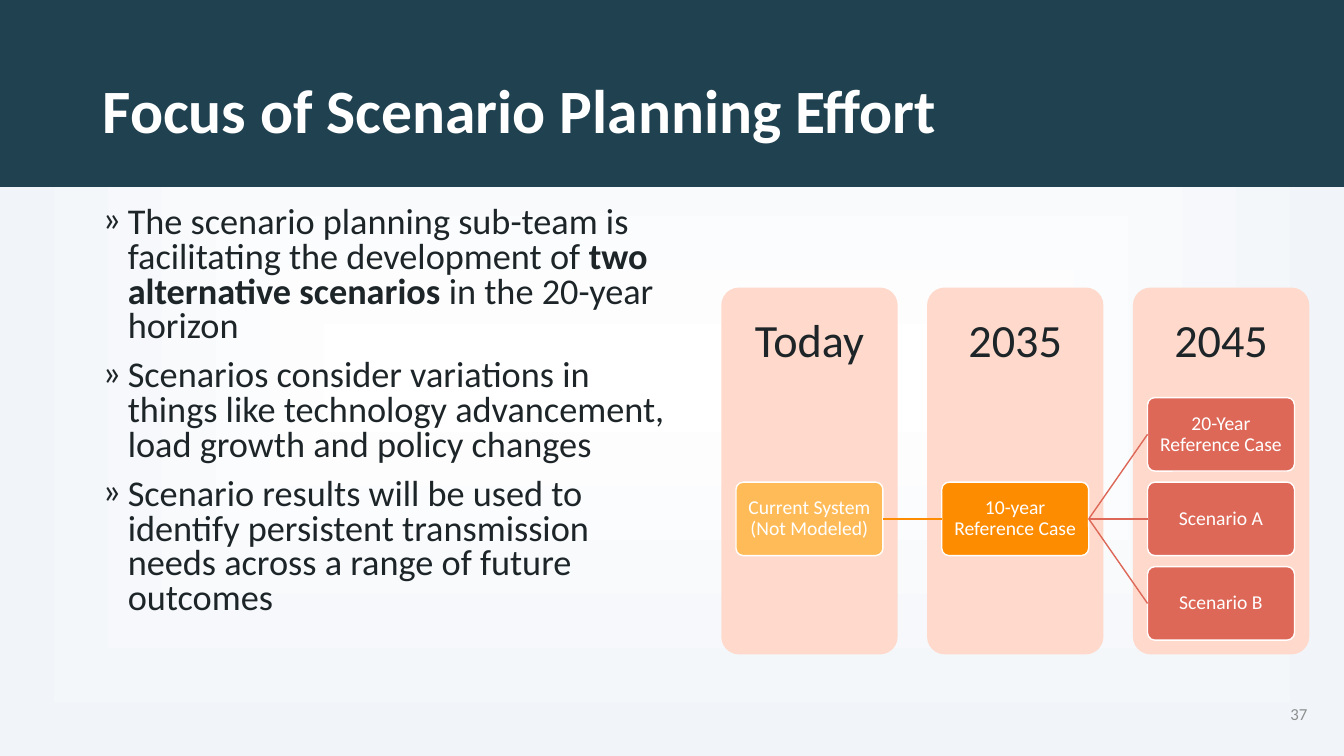
from lxml import etree
from pptx import Presentation
from pptx.dml.color import RGBColor
from pptx.enum.shapes import MSO_CONNECTOR, MSO_SHAPE
from pptx.enum.text import MSO_ANCHOR, PP_ALIGN
from pptx.oxml.ns import qn
from pptx.util import Pt

RECT, ROUND = MSO_SHAPE.RECTANGLE, MSO_SHAPE.ROUNDED_RECTANGLE
STRAIGHT = MSO_CONNECTOR.STRAIGHT
TOP, MIDDLE = MSO_ANCHOR.TOP, MSO_ANCHOR.MIDDLE
LEFT, CENTER, RIGHT = PP_ALIGN.LEFT, PP_ALIGN.CENTER, PP_ALIGN.RIGHT

C = {"white": "FFFFFF", "mist": "F1F5F9", "navy": "204150", "ink": "1D2528",
     "gray": "8D8E8E", "peach": "FFDACC", "amber": "FFBB58",
     "orange": "FE8C00", "coral": "DD6858"}


def add_box(kind, x, y, w, h, fill, line=None):
    sp = s.shapes.add_shape(kind, Pt(x), Pt(y), Pt(w), Pt(h))
    sp.shadow.inherit = False
    sp.fill.solid()
    sp.fill.fore_color.rgb = RGBColor.from_string(C[fill])
    if line:
        sp.line.color.rgb = RGBColor.from_string(C[line])
        sp.line.width = Pt(1)
    else:
        sp.line.fill.background()
    if kind == ROUND:
        sp.adjustments[0] = 0.1
    return sp


def add_text(sp, paragraphs, size, color, align=LEFT, anchor=MIDDLE,
             spacing=0.9, before=0, inset=None, bullet=None):
    tf = sp.text_frame
    tf.word_wrap = True
    tf.vertical_anchor = anchor
    if inset is not None:
        tf.margin_left = tf.margin_right = Pt(inset)
        tf.margin_top = tf.margin_bottom = Pt(inset)
    for i, runs in enumerate(paragraphs):
        p = tf.paragraphs[0] if i == 0 else tf.add_paragraph()
        p.alignment = align
        p.line_spacing = spacing
        p.space_before = Pt(before if i else 0)
        if bullet:
            pPr = p._p.get_or_add_pPr()
            pPr.set("marL", str(Pt(18)))
            pPr.set("indent", str(-Pt(18)))
            etree.SubElement(pPr, qn("a:buFont"), typeface="Calibri")
            etree.SubElement(pPr, qn("a:buChar"), char=bullet)
        for text, bold in runs:
            r = p.add_run()
            r.text = text
            r.font.name = "Calibri"
            r.font.size = Pt(size)
            r.font.bold = bold
            r.font.color.rgb = RGBColor.from_string(C[color])


prs = Presentation()
prs.slide_width, prs.slide_height = Pt(960), Pt(540)
s = prs.slides.add_slide(prs.slide_layouts[6])

bg = s.background.fill
bg.gradient()
for stop, color, position in zip(bg.gradient_stops, ("white", "mist"), (0, 1)):
    stop.color.rgb = RGBColor.from_string(C[color])
    stop.position = position
grad = s._element.find(".//" + qn("a:gradFill"))
grad.remove(grad.find(qn("a:lin")))
center = etree.SubElement(grad, qn("a:path"), {"path": "rect"})
etree.SubElement(center, qn("a:fillToRect"), l="50000", t="50000", r="50000", b="50000")

add_box(RECT, 0, 0, 960, 133.2, "navy", "navy")
title = s.shapes.add_textbox(Pt(66.2), Pt(28.8), Pt(828), Pt(104.4))
add_text(title, [[("Focus of Scenario Planning Effort", True)]], 44, "white")

points = [
    [("The scenario planning sub-team is facilitating the development of ", False),
     ("two alternative scenarios ", True),
     ("in the 20-year horizon", False)],
    [("Scenarios consider variations in things like technology advancement, "
      "load growth and policy changes", False)],
    [("Scenario results will be used to identify persistent transmission "
      "needs across a range of future outcomes", False)],
]
body = s.shapes.add_textbox(Pt(66.2), Pt(144), Pt(422), Pt(342.7))
add_text(body, points, 25.9, "ink", anchor=TOP, spacing=0.8, before=10, bullet="»")

number = s.shapes.add_textbox(Pt(896.4), Pt(495.4), Pt(44.6), Pt(28.8))
add_text(number, [[("37", False)]], 12, "gray", align=RIGHT, spacing=1)

PANEL_X, PANEL_Y, PANEL_W, PANEL_H, PANEL_STEP = 515.2, 205.4, 126, 262, 147
CARD_W, CARD_H, CARD_Y, CARD_STEP = 105, 52.5, 344.4, 60.4
stages = [
    ("Today", "amber", [("Current System (Not Modeled)", 0)]),
    ("2035", "orange", [("10-year Reference Case", 0)]),
    ("2045", "coral", [("20-Year Reference Case", -1), ("Scenario A", 0), ("Scenario B", 1)]),
]
source = None
for col, (year, color, cards) in enumerate(stages):
    x = PANEL_X + col * PANEL_STEP
    add_box(ROUND, x, PANEL_Y, PANEL_W, PANEL_H, "peach")
    heading = s.shapes.add_textbox(Pt(x), Pt(PANEL_Y), Pt(PANEL_W), Pt(78.5))
    add_text(heading, [[(year, False)]], 33, "ink", align=CENTER, inset=18.7)
    for label, row in cards:
        card = add_box(ROUND, x + (PANEL_W - CARD_W) / 2, CARD_Y + row * CARD_STEP,
                       CARD_W, CARD_H, color, "white")
        add_text(card, [[(label, False)]], 14, "white", align=CENTER, inset=2.5)
        if source:
            link = s.shapes.add_connector(STRAIGHT, 0, 0, 0, 0)
            link.begin_connect(source, 3)
            link.end_connect(card, 1)
            link.line.color.rgb = RGBColor.from_string(C[color])
            link.line.width = Pt(1)
            etree.SubElement(link._element.spPr, qn("a:effectLst"))
    source = card

prs.save("out.pptx")
